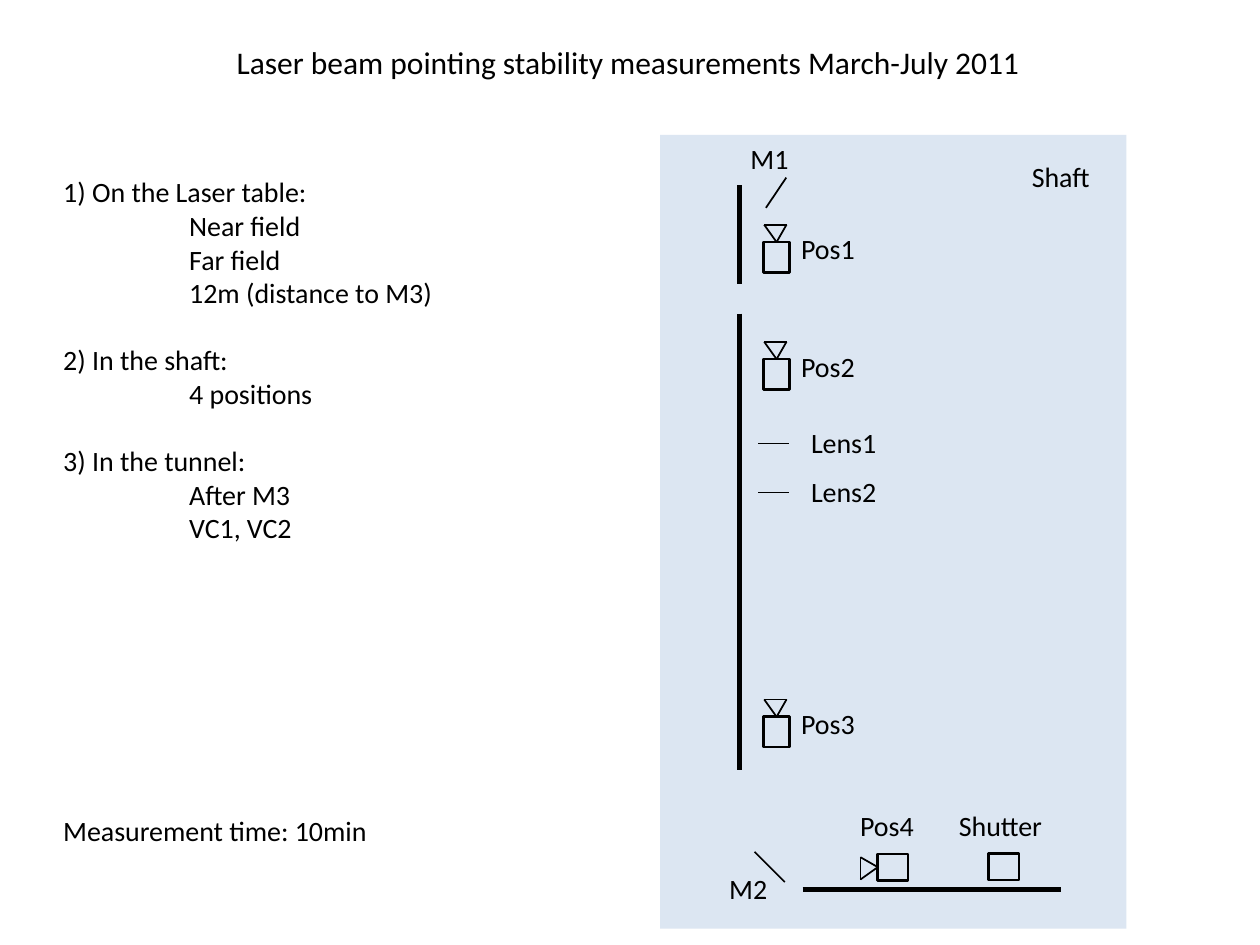
import pptx
import pptx.util
import pptx.dml.color
import pptx.enum.shapes
import pptx.enum.text
import lxml.etree
from pptx.util import Cm

BLACK = "000000"
PANEL_BLUE = "DCE6F2"
FONT = "Calibri"


def colour(hex_value):
    return pptx.dml.color.RGBColor.from_string(hex_value)


def add_line(shapes, x1, y1, x2, y2, weight=1):
    line = shapes.add_connector(pptx.enum.shapes.MSO_CONNECTOR.STRAIGHT,
                                Cm(x1), Cm(y1), Cm(x2), Cm(y2))
    line.line.color.rgb = colour(BLACK)
    line.line.width = pptx.util.Pt(weight)
    properties = line._element.spPr
    lxml.etree.SubElement(properties, pptx.oxml.ns.qn("a:effectLst"))


deck = pptx.Presentation()
deck.slide_width, deck.slide_height = Cm(25.4), Cm(19.05)
page = deck.slides.add_slide(deck.slide_layouts[1])
RECTANGLE = pptx.enum.shapes.MSO_SHAPE.RECTANGLE

# Title
title = page.shapes.title
title.left, title.top, title.width, title.height = Cm(4.5), Cm(0.74), Cm(16.33), Cm(1.02)
title.text_frame.text = "Laser beam pointing stability measurements March-July 2011"
title.text_frame.word_wrap = False
title.text_frame.auto_size = pptx.enum.text.MSO_AUTO_SIZE.NONE
title_font = title.text_frame.paragraphs[0].runs[0].font
title_font.name, title_font.size = FONT, pptx.util.Pt(18)
title_font.color.rgb = colour(BLACK)

# List of measurements: text, left indent in cm, lines of space before
entries = [
    ("1) On the Laser table:", 0, 0),
    ("Near field", 2.54, 0),
    ("Far field", 2.54, 0),
    ("12m (distance to M3)", 2.54, 0),
    ("2) In the shaft:", 0, 1),
    ("4 positions", 2.54, 0),
    ("3) In the tunnel:", 0, 1),
    ("After M3", 2.54, 0),
    ("VC1, VC2", 2.54, 0),
    ("Measurement time: 10min", 0, 8),
]
LINE_HEIGHT = 19.2
body = page.placeholders[1]
body.left, body.top, body.width, body.height = Cm(1.02), Cm(3.4), Cm(9), Cm(13.95)
body.text_frame.text = "\n".join(text for text, indent, gap in entries)
body.text_frame.auto_size = pptx.enum.text.MSO_AUTO_SIZE.NONE
for para, (text, indent, gap) in zip(body.text_frame.paragraphs, entries):
    para.space_before = pptx.util.Pt(gap * LINE_HEIGHT)
    properties = para._p.get_or_add_pPr()
    properties.set("marL", str(int(Cm(indent))))
    properties.set("indent", "0")
    lxml.etree.SubElement(properties, pptx.oxml.ns.qn("a:buNone"))
    font = para.runs[0].font
    font.name, font.size = FONT, pptx.util.Pt(16)
    font.color.rgb = colour(BLACK)

# Shaft panel
panel = page.shapes.add_shape(RECTANGLE, Cm(13.31), Cm(2.72), Cm(9.4), Cm(16))
panel.shadow.inherit = False
panel.fill.solid()
panel.fill.fore_color.rgb = colour(PANEL_BLUE)
panel.line.fill.background()

# Walls, mirrors and lenses: x1, y1, x2, y2, weight
for segment in [
    (14.91, 3.73, 14.91, 5.72, 3),
    (14.91, 6.32, 14.91, 15.52, 3),
    (16.18, 17.93, 21.39, 17.93, 3),
    (15.44, 4.19, 15.85, 3.58, 1),
    (15.82, 17.78, 15.21, 17.17, 1),
    (15.29, 8.94, 15.9, 8.94, 1),
    (15.29, 9.93, 15.9, 9.93, 1),
]:
    add_line(page.shapes, *segment)

# Cameras: left and top of the housing, rotation
WIDTH, HEIGHT, LENS_DEPTH = 0.53, 0.61, 0.35
housings = []
for left, top, rotation in [(15.39, 4.88, 0), (15.39, 7.24, 0),
                            (15.39, 14.45, 0), (17.56, 17.35, 270)]:
    camera = page.shapes.add_group_shape()
    housings.append(camera.shapes.add_shape(
        RECTANGLE, Cm(left), Cm(top), Cm(WIDTH), Cm(HEIGHT)))
    tip, front = left + WIDTH / 2, top - LENS_DEPTH
    add_line(camera.shapes, tip, top, tip + 0.2, front)
    add_line(camera.shapes, tip, top, tip - 0.25, front)
    add_line(camera.shapes, tip - 0.25, front, tip + 0.2, front)
    camera.rotation = rotation

# Shutter
housings.append(page.shapes.add_shape(
    RECTANGLE, Cm(19.93), Cm(17.21), Cm(HEIGHT), Cm(WIDTH)))

for housing in housings:
    housing.shadow.inherit = False
    housing.fill.background()
    housing.line.color.rgb = colour(BLACK)
    housing.line.width = pptx.util.Pt(1.5)

# Labels: text, left, top, width
for text, left, top, width in [
    ("Shaft", 20.55, 3.1, 1.7),
    ("M1", 14.88, 2.72, 1.3),
    ("M2", 14.45, 17.45, 1.3),
    ("Pos1", 15.9, 4.55, 1.6),
    ("Pos2", 15.9, 6.93, 1.6),
    ("Pos3", 15.9, 14.12, 1.6),
    ("Pos4", 17.09, 16.18, 1.6),
    ("Lens1", 16.1, 8.46, 1.85),
    ("Lens2", 16.1, 9.45, 1.85),
    ("Shutter", 19.08, 16.18, 2.24),
]:
    box = page.shapes.add_textbox(Cm(left), Cm(top), Cm(width), Cm(0.94))
    box.text_frame.text = text
    box.text_frame.word_wrap = False
    font = box.text_frame.paragraphs[0].runs[0].font
    font.name, font.size = FONT, pptx.util.Pt(16)
    font.color.rgb = colour(BLACK)

deck.save("out.pptx")
